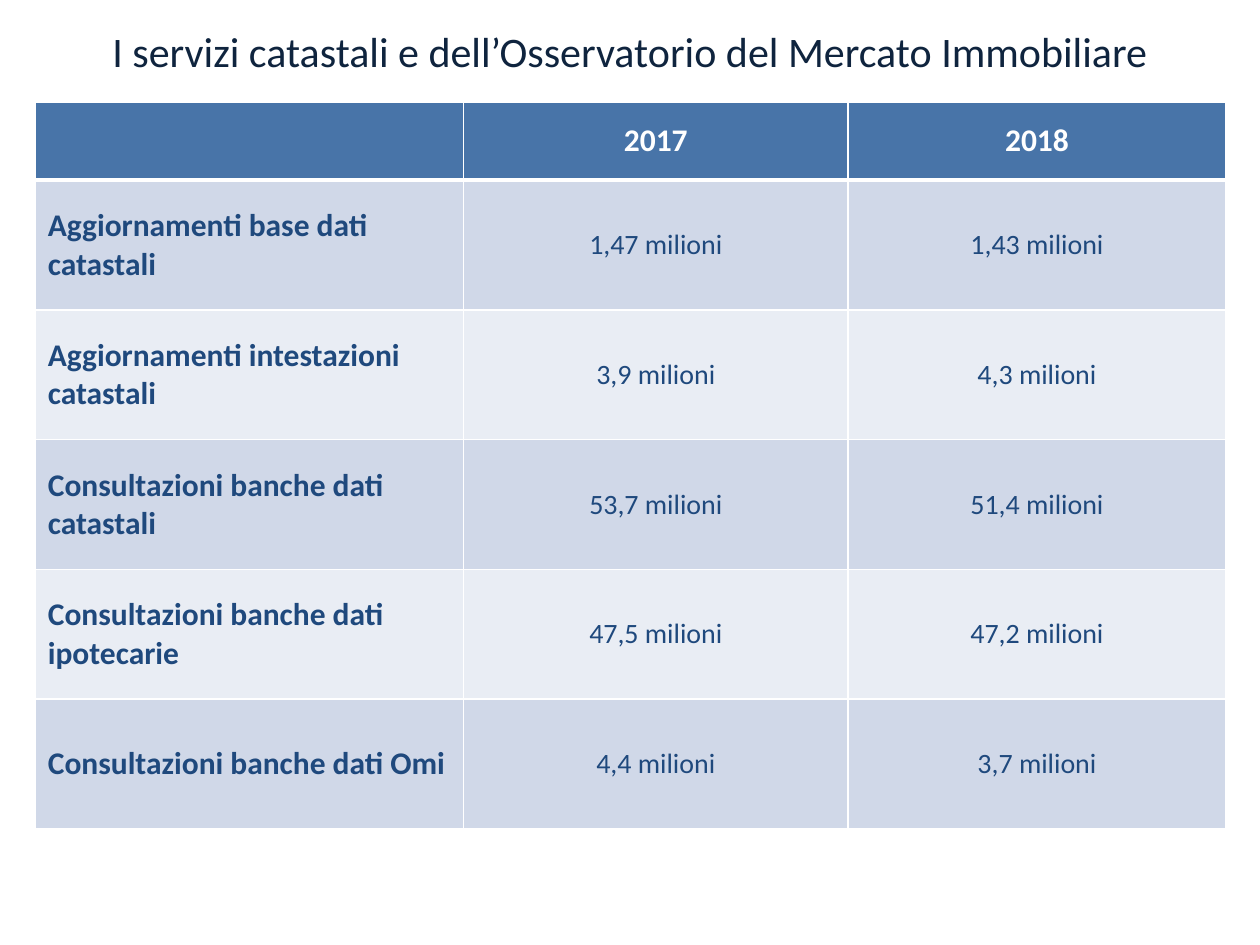
from lxml.etree import SubElement
from pptx import Presentation
from pptx.dml.color import RGBColor
from pptx.enum.text import MSO_ANCHOR, MSO_AUTO_SIZE, PP_ALIGN
from pptx.oxml.ns import qn
from pptx.util import Inches, Pt

TITLE = "I servizi catastali e dell’Osservatorio del Mercato Immobiliare"
ROWS = [
    ("", "2017", "2018"),
    ("Aggiornamenti base dati catastali", "1,47 milioni", "1,43 milioni"),
    ("Aggiornamenti intestazioni catastali", "3,9 milioni", "4,3 milioni"),
    ("Consultazioni banche dati catastali", "53,7 milioni", "51,4 milioni"),
    ("Consultazioni banche dati ipotecarie", "47,5 milioni", "47,2 milioni"),
    ("Consultazioni banche dati Omi", "4,4 milioni", "3,7 milioni"),
]
COL_WIDTHS = (3.4, 3.05, 3.0)
HEADER_HEIGHT, ROW_HEIGHT = 0.62, 1.03

THEME = {
    "font": "Calibri",
    "title": {"size": 24, "color": "0F243E", "bold": False},
    "header": {"size": 18, "color": "FFFFFF", "bold": True},
    "label": {"size": 18, "color": "1F497D", "bold": True},
    "value": {"size": 16, "color": "1F497D", "bold": False},
    "header_fill": "4874A8",
    "bands": ("D0D8E8", "E9EDF4"),
    "border": "FFFFFF",
}


def write(tf, text, style, align):
    p = tf.paragraphs[0]
    p.alignment = align
    if not text:
        return
    r = p.add_run()
    r.text = text
    fmt = {"name": THEME["font"], "size": Pt(style["size"]), "bold": style["bold"]}
    for key, value in fmt.items():
        setattr(r.font, key, value)
    r.font.color.rgb = RGBColor.from_string(style["color"])


def set_borders(cell, top, bottom):
    tc_pr = cell._tc.get_or_add_tcPr()
    for side, width in {"L": 1, "R": 1, "T": top, "B": bottom}.items():
        ln = SubElement(tc_pr, qn(f"a:ln{side}"), w=str(Pt(width)))
        fill = SubElement(ln, qn("a:solidFill"))
        SubElement(fill, qn("a:srgbClr"), val=THEME["border"])


def add_title(s):
    sp = s.shapes.title
    box = {"left": 0.5, "top": 0.06, "width": 9, "height": 0.69}
    for key, value in box.items():
        setattr(sp, key, Inches(value))
    tf = sp.text_frame
    fmt = {"auto_size": MSO_AUTO_SIZE.NONE, "word_wrap": True,
           "vertical_anchor": MSO_ANCHOR.MIDDLE}
    for key, value in fmt.items():
        setattr(tf, key, value)
    write(tf, TITLE, THEME["title"], PP_ALIGN.CENTER)


def add_services_table(s):
    heights = [HEADER_HEIGHT] + [ROW_HEIGHT] * (len(ROWS) - 1)
    table = s.shapes.add_table(
        len(ROWS), len(COL_WIDTHS), Inches(0.28), Inches(0.81),
        Inches(sum(COL_WIDTHS)), Inches(sum(heights))).table
    for col, width in zip(table.columns, COL_WIDTHS):
        col.width = Inches(width)
    for i, (row, height) in enumerate(zip(ROWS, heights)):
        table.rows[i].height = Inches(height)
        color = THEME["bands"][(i - 1) % 2] if i else THEME["header_fill"]
        for j, text in enumerate(row):
            cell = table.cell(i, j)
            cell.vertical_anchor = MSO_ANCHOR.MIDDLE
            set_borders(cell, 3 if i == 1 else 1, 3 if i == 0 else 1)
            cell.fill.solid()
            cell.fill.fore_color.rgb = RGBColor.from_string(color)
            kind = "header" if i == 0 else "value" if j else "label"
            align = PP_ALIGN.LEFT if kind == "label" else PP_ALIGN.CENTER
            write(cell.text_frame, text, THEME[kind], align)


def main():
    prs = Presentation()
    prs.slide_width, prs.slide_height = Inches(10), Inches(7.5)
    s = prs.slides.add_slide(prs.slide_layouts[5])
    add_title(s)
    add_services_table(s)
    prs.save("out.pptx")


if __name__ == "__main__":
    main()
